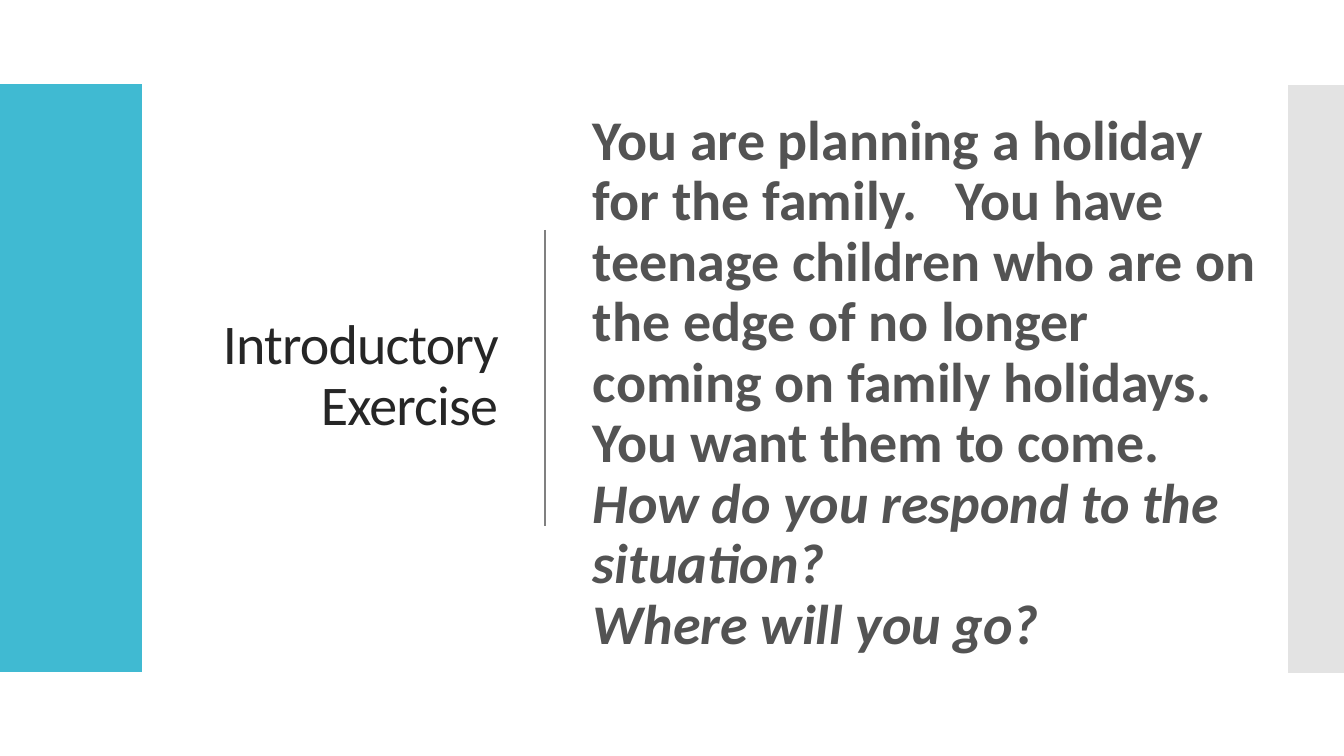
from dataclasses import dataclass

from lxml.etree import SubElement
from pptx import Presentation
from pptx.dml.color import RGBColor
from pptx.enum.shapes import MSO_CONNECTOR, MSO_SHAPE
from pptx.enum.text import MSO_ANCHOR, MSO_AUTO_SIZE, PP_ALIGN
from pptx.oxml.ns import qn
from pptx.shapes.base import BaseShape
from pptx.slide import Slide
from pptx.util import Emu, Pt

PX_PER_INCH = 100.8
TITLE_ONLY = 5
FONT = "Calibri"
TEAL = RGBColor(0x40, 0xBA, 0xD2)
SILVER = RGBColor(0xC8, 0xC8, 0xC8)
RULE_GREY = RGBColor(0x80, 0x80, 0x80)
TITLE_INK = RGBColor(0x26, 0x26, 0x26)
BODY_INK = RGBColor(0x53, 0x53, 0x53)


def px(length: int) -> Emu:
    return Emu(round(length * 914400 / PX_PER_INCH))


@dataclass(frozen=True)
class Box:
    left: int
    top: int
    width: int
    height: int

    def emu(self) -> tuple[Emu, Emu, Emu, Emu]:
        return px(self.left), px(self.top), px(self.width), px(self.height)


@dataclass(frozen=True)
class Bar:
    box: Box
    color: RGBColor
    opacity: int = 100


@dataclass(frozen=True)
class Line:
    text: str
    italic: bool = False


BARS = [
    Bar(Box(0, 84, 142, 588), TEAL),
    Bar(Box(1288, 85, 56, 588), SILVER, opacity=50),
]
TITLE_BOX = Box(169, 95, 339, 564)
BODY_BOX = Box(583, 27, 683, 714)
RULE = Box(545, 230, 0, 296)
TITLE = [Line("Introductory Exercise")]
BODY = [
    Line("You are planning a holiday for the family.   You have teenage children "
         "who are on the edge of no longer coming on family holidays.  "
         "You want them to come."),
    Line("How do you respond to the situation?", italic=True),
    Line("Where will you go?", italic=True),
]


def add_bar(slide: Slide, bar: Bar) -> None:
    shape = slide.shapes.add_shape(MSO_SHAPE.RECTANGLE, *bar.box.emu())
    shape.shadow.inherit = False
    shape.fill.solid()
    shape.fill.fore_color.rgb = bar.color
    shape.line.fill.background()
    if bar.opacity < 100:
        color = shape._element.spPr.find(f"{qn('a:solidFill')}/{qn('a:srgbClr')}")
        SubElement(color, qn("a:alpha"), val=str(bar.opacity * 1000))


def add_rule(slide: Slide, rule: Box) -> None:
    connector = slide.shapes.add_connector(
        MSO_CONNECTOR.STRAIGHT, px(rule.left), px(rule.top),
        px(rule.left + rule.width), px(rule.top + rule.height))
    connector.line.color.rgb = RULE_GREY
    connector.line.width = Pt(1)
    SubElement(connector._element.spPr, qn("a:effectLst"))


def write_text(shape: BaseShape, lines: list[Line], *, color: RGBColor,
               size: int = 40, bold: bool = False, tracking: float = 0,
               align: PP_ALIGN = PP_ALIGN.LEFT) -> None:
    """Fill a shape with one paragraph per line; tracking is in points."""
    frame = shape.text_frame
    frame.word_wrap = True
    frame.auto_size = MSO_AUTO_SIZE.NONE
    frame.vertical_anchor = MSO_ANCHOR.MIDDLE
    for index, line in enumerate(lines):
        paragraph = frame.add_paragraph() if index else frame.paragraphs[0]
        paragraph.alignment = align
        paragraph.line_spacing = 0.9
        paragraph.space_before = Pt(0)
        run = paragraph.add_run()
        run.text = line.text
        font = run.font
        font.name, font.size = FONT, Pt(size)
        font.bold, font.italic = bold, line.italic
        font.color.rgb = color
        if tracking:
            run._r.get_or_add_rPr().set("spc", str(round(tracking * 100)))


def main() -> None:
    presentation = Presentation()
    presentation.slide_width, presentation.slide_height = px(1344), px(756)
    slide = presentation.slides.add_slide(presentation.slide_layouts[TITLE_ONLY])

    title = slide.shapes.title
    title.left, title.top, title.width, title.height = TITLE_BOX.emu()
    write_text(title, TITLE, color=TITLE_INK, tracking=-0.6, align=PP_ALIGN.RIGHT)

    for bar in BARS:
        add_bar(slide, bar)
    add_rule(slide, RULE)
    body = slide.shapes.add_textbox(*BODY_BOX.emu())
    write_text(body, BODY, color=BODY_INK, bold=True)

    presentation.save("out.pptx")


if __name__ == "__main__":
    main()
